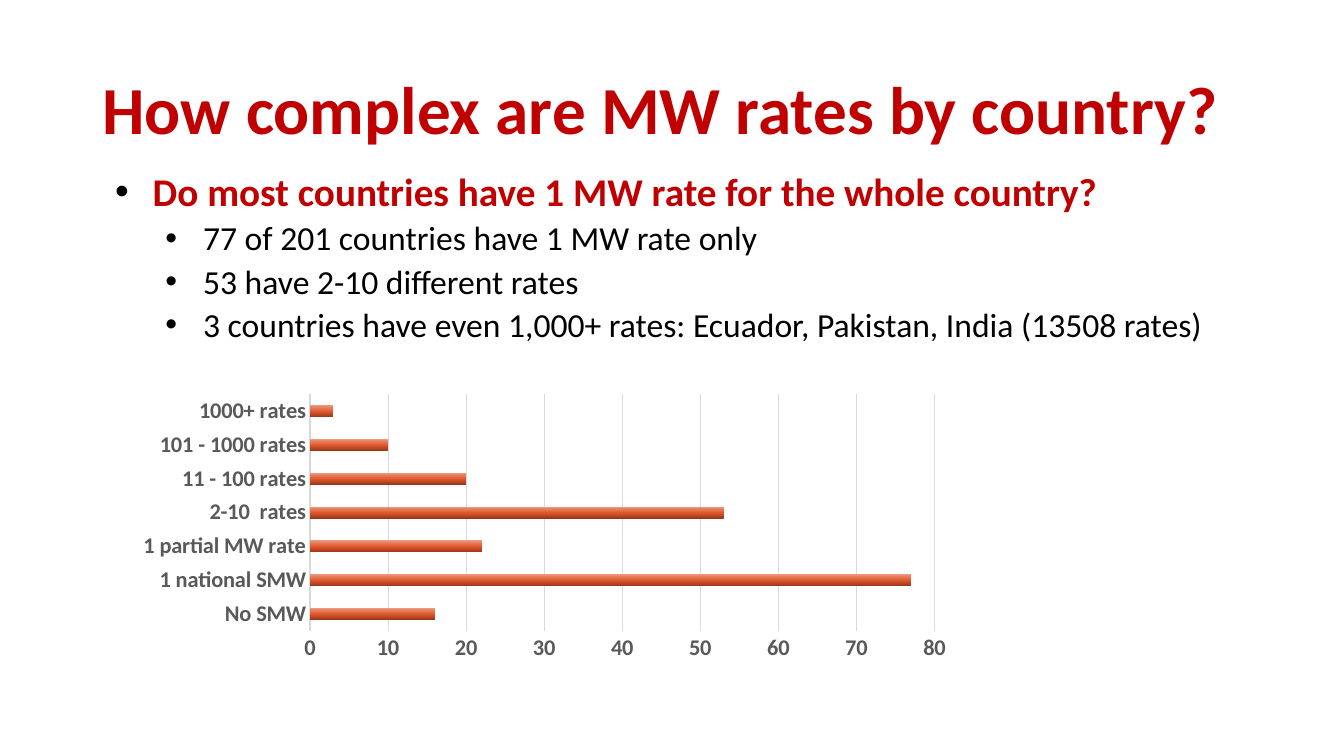
from lxml import etree
from pptx import Presentation
from pptx import util as u
from pptx.chart.data import CategoryChartData
from pptx.dml.color import RGBColor
from pptx.enum import chart as ch
from pptx.enum import text as t
from pptx.oxml import parse_xml
from pptx.oxml.ns import nsdecls, qn

RED = RGBColor(0xC0, 0x00, 0x00)
BLACK = RGBColor(0x00, 0x00, 0x00)
GRAY = RGBColor(0x59, 0x59, 0x59)
RULE = RGBColor(0xD9, 0xD9, 0xD9)
STOPS = [(0, "993617"), (48, "E0582D"), (100, "EC987D")]
FONT = "Calibri"

POINTS = [
    "77 of 201 countries have 1 MW rate only",
    "53 have 2-10 different rates",
    "3 countries have even 1,000+ rates: Ecuador, Pakistan, India (13508 rates)",
]
RATES = {
    "No SMW": 16,
    "1 national SMW": 77,
    "1 partial MW rate": 22,
    "2-10  rates": 53,
    "11 - 100 rates": 20,
    "101 - 1000 rates": 10,
    "1000+ rates": 3,
}


def style(font, size, color, bold=False):
    font.name, font.size, font.bold = FONT, u.Pt(size), bold
    font.color.rgb = color


def write(para, words, size=24, color=BLACK, bold=False, before=0, left=None):
    """Fill a paragraph; left is the bulleted text's indent in cm."""
    if left is not None:
        props = para._p.get_or_add_pPr()
        props.set("marL", str(u.Cm(left)))
        props.set("indent", str(u.Cm(-0.95)))
        tint = etree.SubElement(props, qn("a:buClr"))
        etree.SubElement(tint, qn("a:srgbClr"), val=str(BLACK))
        etree.SubElement(props, qn("a:buFont"), typeface="Arial")
        etree.SubElement(props, qn("a:buChar"), char="•")
    para.alignment = t.PP_ALIGN.LEFT
    para.line_spacing = 0.9
    para.space_before = u.Pt(before)
    run = para.add_run()
    run.text = words
    style(run.font, size, color, bold)


class Deck:
    def __init__(self):
        self.prs = Presentation()
        self.prs.slide_width = u.Cm(33.87)
        self.prs.slide_height = u.Cm(19.05)
        self.slide = self.prs.slides.add_slide(self.prs.slide_layouts[5])

    def title(self, words, box):
        shape = self.slide.shapes.title
        shape.left, shape.top, shape.width, shape.height = map(u.Cm, box)
        frame = shape.text_frame
        frame.auto_size = t.MSO_AUTO_SIZE.NONE
        frame.vertical_anchor = t.MSO_ANCHOR.MIDDLE
        write(frame.paragraphs[0], words, size=48, color=RED, bold=True)

    def points(self, head, items, box):
        frame = self.slide.shapes.add_textbox(*map(u.Cm, box)).text_frame
        frame.word_wrap = True
        write(frame.paragraphs[0], head, size=28, color=RED, bold=True, left=1.27)
        for item in items:
            para = frame.add_paragraph()
            para.level = 1
            write(para, item, before=5, left=2.54)

    def bars(self, rates, box):
        data = CategoryChartData()
        data.categories = list(rates)
        data.add_series("Series 1", list(rates.values()))
        kind = ch.XL_CHART_TYPE.BAR_CLUSTERED
        chart = self.slide.shapes.add_chart(kind, *map(u.Cm, box), data).chart
        chart.has_legend = chart.has_title = False
        style(chart.font, 10, BLACK)

        for axis in (chart.category_axis, chart.value_axis):
            axis.major_tick_mark = axis.minor_tick_mark = ch.XL_TICK_MARK.NONE
            style(axis.tick_labels.font, 16, GRAY, True)
        cats, vals = chart.category_axis, chart.value_axis
        vals.minimum_scale, vals.maximum_scale, vals.major_unit = 0, 80, 10
        vals.has_major_gridlines = True
        for line in (cats.format.line, vals.major_gridlines.format.line):
            line.color.rgb, line.width = RULE, u.Pt(0.75)
        vals.format.line.fill.background()

        plot = chart.plots[0]
        plot.gap_width, plot.vary_by_categories = 182, False
        self.shade(plot.series[0])
        self.place(chart, x=0.233, y=0.051, w=0.742, h=0.782)

    def shade(self, series):
        """Give the bars a gradient that runs from bottom to top."""
        stops = "".join(
            f'<a:gs pos="{pos * 1000}"><a:srgbClr val="{color}"/></a:gs>'
            for pos, color in STOPS
        )
        series.format.fill.background()
        props = series._element.spPr
        props.replace(props.find(qn("a:noFill")), parse_xml(
            f'<a:gradFill {nsdecls("a")}><a:gsLst>{stops}</a:gsLst>'
            '<a:lin ang="16200000" scaled="0"/></a:gradFill>'
        ))

    def place(self, chart, **part):
        """Fix the inner plot area as fractions of the chart."""
        area = chart._chartSpace.chart.plotArea
        for old in area.findall(qn("c:layout")):
            area.remove(old)
        modes = '<c:xMode val="edge"/><c:yMode val="edge"/>'
        sizes = "".join(f'<c:{key} val="{val}"/>' for key, val in part.items())
        area.insert(0, parse_xml(
            f'<c:layout {nsdecls("c")}><c:manualLayout>'
            f'<c:layoutTarget val="inner"/>{modes}{sizes}'
            '</c:manualLayout></c:layout>'
        ))


def main():
    deck = Deck()
    deck.title("How complex are MW rates by country?", (2.33, 1.01, 29.21, 3.68))
    deck.points("Do most countries have 1 MW rate for the whole country?",
                POINTS, (2.33, 4.22, 29.21, 12.95))
    deck.bars(RATES, (2.87, 9.55, 21.21, 7.62))
    deck.prs.save("out.pptx")


if __name__ == "__main__":
    main()
